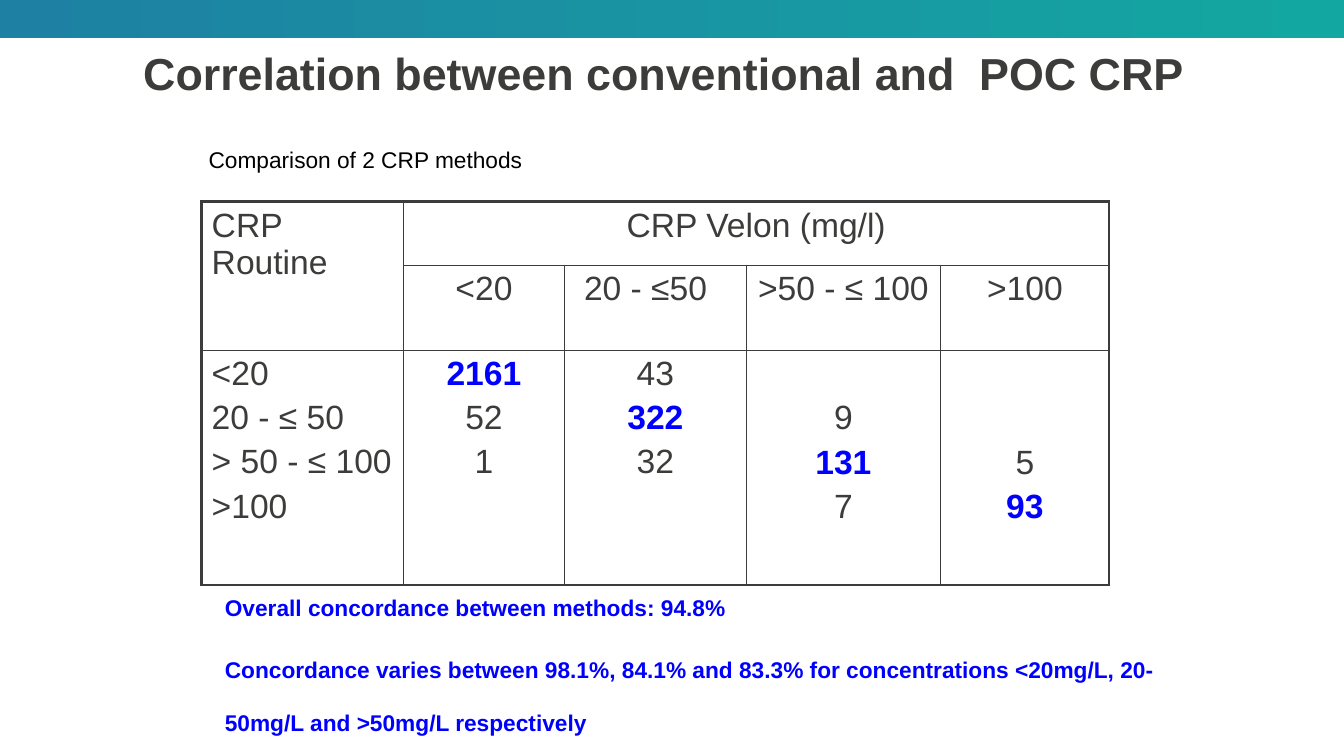
from lxml import etree
from pptx import Presentation
from pptx.dml.color import RGBColor
from pptx.enum.shapes import MSO_SHAPE
from pptx.enum.text import MSO_ANCHOR, PP_ALIGN
from pptx.oxml.ns import qn
from pptx.util import Inches, Pt

RECTANGLE = MSO_SHAPE.RECTANGLE
TOP = MSO_ANCHOR.TOP
LEFT, CENTER = PP_ALIGN.LEFT, PP_ALIGN.CENTER

FONT = "Arial"
DARK, BLUE, BLACK = "3C3C3B", "0000FF", "000000"
BAND_START, BAND_END = "1E81A3", "13A7A1"
THIN, THICK = 1, 2.25
CELL_MARGIN, LINE_STEP = 0.05, 0.44

COLUMN_WIDTHS = [2, 1.6, 1.8, 1.93, 1.67]
ROW_HEIGHTS = [0.63, 0.84, 2.33]
POC_RANGES = ["<20", " 20 - ≤50", ">50 - ≤ 100", ">100"]
ROUTINE_RANGES = ["<20", "20 - ≤ 50", "> 50 - ≤ 100", ">100"]
# Each column: rows skipped before the first count, then the counts
COUNTS = [
    (0, ["2161", "52", "1"]),
    (0, ["43", "322", "32"]),
    (1, ["9", "131", "7"]),
    (2, ["5", "93"]),
]
FINDINGS = [
    "Overall concordance between methods: 94.8%",
    "Concordance varies between 98.1%, 84.1% and 83.3% for concentrations "
    "<20mg/L, 20-50mg/L and >50mg/L respectively",
]


def color(hex_string):
    return RGBColor.from_string(hex_string)


def place(shape, box):
    shape.left, shape.top, shape.width, shape.height = map(Inches, box)


def style(para, size, hex_string, bold=False, align=LEFT):
    para.alignment = align
    font = para.font
    font.name, font.size, font.bold = FONT, Pt(size), bold
    font.color.rgb = color(hex_string)


def add_band(page, box):
    band = page.shapes.add_shape(RECTANGLE, *map(Inches, box))
    band.shadow.inherit = False
    band.line.fill.background()
    band.fill.gradient()
    band.fill.gradient_angle = 0
    for stop, hex_string in zip(band.fill.gradient_stops, (BAND_START, BAND_END)):
        stop.color.rgb = color(hex_string)


def add_title(page, box, text):
    title = page.shapes.title
    place(title, box)
    frame = title.text_frame
    frame.text = text
    frame.vertical_anchor = TOP
    para = frame.paragraphs[0]
    para.line_spacing = 0.9
    style(para, 32, DARK, bold=True)


def add_lowered_text(page, box, lines, hex_string, bold=False, indent=0):
    frame = page.shapes.add_textbox(*map(Inches, box)).text_frame
    frame.word_wrap = True
    frame.margin_left = Inches(0.1 + indent)
    frame.text = "\n".join(lines)
    for index, para in enumerate(frame.paragraphs):
        style(para, 28, hex_string, bold)
        para.space_before = Pt(6 if index else 0)
        # Subscript position
        for span in para.runs:
            span._r.get_or_add_rPr().set("baseline", "-25000")


def set_borders(cell, widths):
    properties = cell._tc.get_or_add_tcPr()
    for side, width in widths.items():
        line = etree.SubElement(properties, qn(f"a:ln{side}"), w=str(Pt(width)))
        fill = etree.SubElement(line, qn("a:solidFill"))
        etree.SubElement(fill, qn("a:srgbClr"), val=DARK)


def fill_cell(cell, lines, align=CENTER, skipped=0, highlight=None):
    cell.margin_top = Inches(CELL_MARGIN + skipped * LINE_STEP)
    cell.text = "\n".join(lines)
    for index, para in enumerate(cell.text_frame.paragraphs):
        marked = index == highlight
        style(para, 24, BLUE if marked else DARK, marked, align)
        para.space_before = Pt(4.8 if index else 0)


def add_comparison_table(page, box):
    rows, columns = len(ROW_HEIGHTS), len(COLUMN_WIDTHS)
    table = page.shapes.add_table(rows, columns, *map(Inches, box)).table
    table.first_row = table.horz_banding = False
    for column, width in zip(table.columns, COLUMN_WIDTHS):
        column.width = Inches(width)
    for row, height in zip(table.rows, ROW_HEIGHTS):
        row.height = Inches(height)
    table.cell(0, 0).merge(table.cell(1, 0))
    table.cell(0, 1).merge(table.cell(0, columns - 1))

    # Frame and grid
    for r in range(rows):
        for c in range(columns):
            cell = table.cell(r, c)
            if not cell.is_spanned:
                last_row = r + cell.span_height == rows
                last_column = c + cell.span_width == columns
                set_borders(cell, {
                    "L": THIN if c else THICK,
                    "R": THICK if last_column else THIN,
                    "T": THIN if r else THICK,
                    "B": THICK if last_row else THIN,
                })
            cell.fill.background()

    # Headings
    fill_cell(table.cell(0, 0), ["CRP Routine"], LEFT)
    fill_cell(table.cell(0, 1), ["CRP Velon (mg/l)"])
    for c, label in enumerate(POC_RANGES, 1):
        fill_cell(table.cell(1, c), [label], LEFT if c == 2 else CENTER)

    # Counts, with the agreeing ranges on the diagonal in blue
    fill_cell(table.cell(2, 0), ROUTINE_RANGES, LEFT)
    for index, (skipped, counts) in enumerate(COUNTS):
        fill_cell(table.cell(2, index + 1), counts, CENTER, skipped, index - skipped)


def main():
    deck = Presentation()
    deck.slide_width, deck.slide_height = Inches(13.33), Inches(7.5)
    page = deck.slides.add_slide(deck.slide_layouts[5])
    add_band(page, (0, 0, 13.33, 0.38))
    add_title(page, (1.32, 0.46, 12, 1.25),
              "Correlation between conventional and  POC CRP")
    add_comparison_table(page, (2, 2, sum(COLUMN_WIDTHS), sum(ROW_HEIGHTS)))
    add_lowered_text(page, (1.97, 1.14, 8, 0.41),
                     ["Comparison of 2 CRP methods"], BLACK)
    add_lowered_text(page, (1.75, 5.58, 9.92, 1.33), FINDINGS, BLUE,
                     bold=True, indent=0.38)
    deck.save("out.pptx")


if __name__ == "__main__":
    main()
